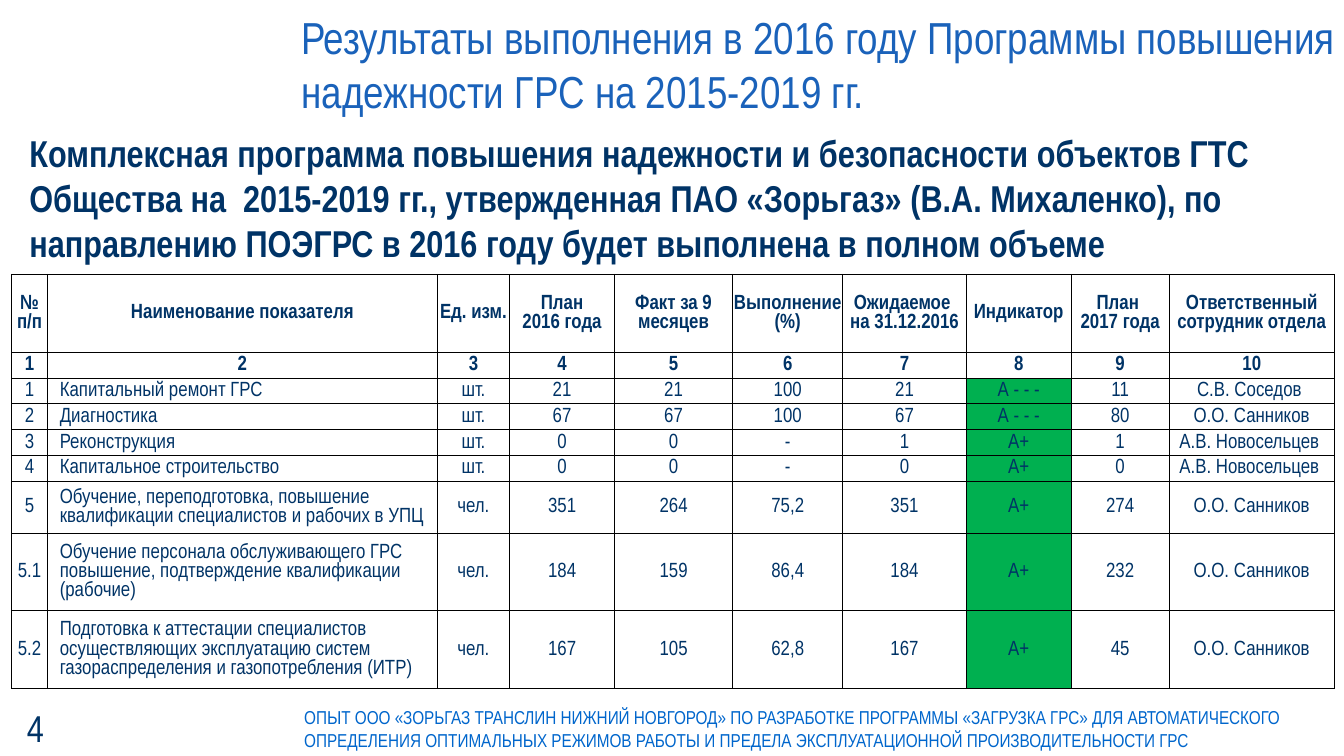
from dataclasses import dataclass
from itertools import product

from lxml import etree
from pptx import Presentation
from pptx import util as u
from pptx.dml.color import RGBColor
from pptx.enum import text
from pptx.oxml.ns import qn


@dataclass(frozen=True)
class Theme:
    font: str = "Arial Narrow"
    heading: str = "1A62BA"
    body: str = "003366"
    footer: str = "0066CC"
    done: str = "00B050"
    border: str = "000000"
    border_pt: float = 0.5
    heading_pt: int = 24
    body_pt: int = 20
    table_pt: int = 11
    footer_pt: int = 10


THEME = Theme()
WIDTH = u.Inches(10)
HEIGHT = WIDTH * 9 // 16

# Column widths and row heights, as relative weights
COLUMNS = [27, 290, 54, 78, 88, 82, 92, 78, 73, 123]
ROWS = [3, 1, 1, 1, 1, 1, 2, 3, 3]
HEADER_ROWS, NAME_COLUMN, INDICATOR_COLUMN = 2, 1, 7

HEADINGS = ["№ п/п", "Наименование показателя", "Ед. изм.", "План\v2016 года",
            "Факт за 9 месяцев", "Выполнение\n(%)", "Ожидаемое \nна 31.12.2016",
            "Индикатор", "План \n2017 года", "Ответственный сотрудник отдела"]
INDICATORS = [
    ["1", "Капитальный ремонт ГРС", "шт.", "21", "21", "100", "21", "А - - -", "11",
     "С.В. Соседов "],
    ["2", "Диагностика", "шт.", "67", "67", "100", "67", "А - - -", "80", "О.О. Санников"],
    ["3", "Реконструкция", "шт.", "0", "0", "-", "1", "А+", "1", "А.В. Новосельцев "],
    ["4", "Капитальное строительство", "шт.", "0", "0", "-", "0", "А+", "0",
     "А.В. Новосельцев "],
    ["5", "Обучение, переподготовка, повышение квалификации специалистов и рабочих в УПЦ",
     "чел.", "351", "264", "75,2", "351", "А+", "274", "О.О. Санников"],
    ["5.1", "Обучение персонала обслуживающего ГРС повышение, подтверждение квалификации "
     "(рабочие)", "чел.", "184", "159", "86,4", "184", "А+", "232", "О.О. Санников"],
    ["5.2", "Подготовка к аттестации специалистов осуществляющих эксплуатацию систем "
     "газораспределения и газопотребления (ИТР)", "чел.", "167", "105", "62,8", "167",
     "А+", "45", "О.О. Санников"],
]


def area(left, top, width, height):
    """Turn percentages of the slide into a box."""
    return (int(WIDTH * left / 100), int(HEIGHT * top / 100),
            int(WIDTH * width / 100), int(HEIGHT * height / 100))


def style(paragraph, size, color, bold=False):
    for run in paragraph.runs:
        run.font.name, run.font.size, run.font.bold = THEME.font, u.Pt(size), bold
        run.font.color.rgb = RGBColor.from_string(color)


def add_text(slide, box, wording, size, color, bold=False, middle=False,
             insets=(0.1, 0.05, 0.1, 0.05)):
    frame = slide.shapes.add_textbox(*box).text_frame
    frame.word_wrap = True
    frame.vertical_anchor = text.MSO_ANCHOR.MIDDLE if middle else text.MSO_ANCHOR.TOP
    (frame.margin_left, frame.margin_top,
     frame.margin_right, frame.margin_bottom) = map(u.Inches, insets)
    frame.text = wording
    style(frame.paragraphs[0], size, color, bold)


def add_borders(cell):
    properties = cell._tc.get_or_add_tcPr()
    for side in ("a:lnL", "a:lnR", "a:lnT", "a:lnB"):
        line = etree.SubElement(properties, qn(side), w=str(u.Pt(THEME.border_pt)))
        fill = etree.SubElement(line, qn("a:solidFill"))
        etree.SubElement(fill, qn("a:srgbClr"), val=THEME.border)


def fill_cell(cell, wording, header, name, done):
    cell.margin_left = cell.margin_right = cell.margin_top = cell.margin_bottom = 0
    cell.vertical_anchor = text.MSO_ANCHOR.MIDDLE
    add_borders(cell)
    if done:
        cell.fill.solid()
        cell.fill.fore_color.rgb = RGBColor.from_string(THEME.done)
    else:
        cell.fill.background()
    cell.text_frame.text = wording
    for paragraph in cell.text_frame.paragraphs:
        if name:
            paragraph.alignment = text.PP_ALIGN.LEFT
            paragraph._p.get_or_add_pPr().set("marL", str(u.Inches(0.09)))
        else:
            paragraph.alignment = text.PP_ALIGN.CENTER
        style(paragraph, THEME.table_pt, THEME.body, header)


def add_indicators(slide, box):
    numbering = [str(n) for n in range(1, len(COLUMNS) + 1)]
    content = [HEADINGS, numbering, *INDICATORS]
    table = slide.shapes.add_table(len(ROWS), len(COLUMNS), *box).table
    table.first_row = table.horz_banding = False
    for column, share in zip(table.columns, COLUMNS):
        column.width = int(box[2] * share / sum(COLUMNS))
    for row, share in zip(table.rows, ROWS):
        row.height = int(box[3] * share / sum(ROWS))
    for r, c in product(range(len(ROWS)), range(len(COLUMNS))):
        header = r < HEADER_ROWS
        fill_cell(table.cell(r, c), content[r][c], header,
                  name=not header and c == NAME_COLUMN,
                  done=not header and c == INDICATOR_COLUMN)


def add_heading(slide, box):
    add_text(slide, box, "Результаты выполнения в 2016 году Программы повышения "
             "надежности ГРС на 2015-2019 гг.",
             THEME.heading_pt, THEME.heading, middle=True)


def add_summary(slide, box):
    add_text(slide, box, "Комплексная программа повышения надежности и безопасности "
             "объектов ГТС Общества на  2015-2019 гг., утвержденная ПАО «Зорьгаз» "
             "(В.А. Михаленко), по направлению ПОЭГРС в 2016 году будет выполнена "
             "в полном объеме", THEME.body_pt, THEME.body, bold=True)


def add_footer(slide, number_box, topic_box):
    add_text(slide, topic_box, "ОПЫТ ООО «ЗОРЬГАЗ ТРАНСЛИН НИЖНИЙ НОВГОРОД» ПО РАЗРАБОТКЕ "
             "ПРОГРАММЫ «ЗАГРУЗКА ГРС» ДЛЯ АВТОМАТИЧЕСКОГО ОПРЕДЕЛЕНИЯ ОПТИМАЛЬНЫХ "
             "РЕЖИМОВ РАБОТЫ И ПРЕДЕЛА ЭКСПЛУАТАЦИОННОЙ ПРОИЗВОДИТЕЛЬНОСТИ ГРС",
             THEME.footer_pt, THEME.footer)
    add_text(slide, number_box, "4", THEME.body_pt, THEME.body, middle=True,
             insets=(0.2, 0, 0, 0))


def main():
    deck = Presentation()
    deck.slide_width, deck.slide_height = WIDTH, HEIGHT
    slide = deck.slides.add_slide(deck.slide_layouts[6])
    add_heading(slide, area(21.45, 0.53, 79.1, 15.82))
    add_indicators(slide, area(0.85, 36.3, 98.45, 54.8))
    add_summary(slide, area(1.2, 16.36, 98.8, 19.73))
    add_footer(slide, area(0, 92.5, 20.9, 7.5), area(21.65, 92.5, 77.2, 7.82))
    deck.save("out.pptx")


if __name__ == "__main__":
    main()
